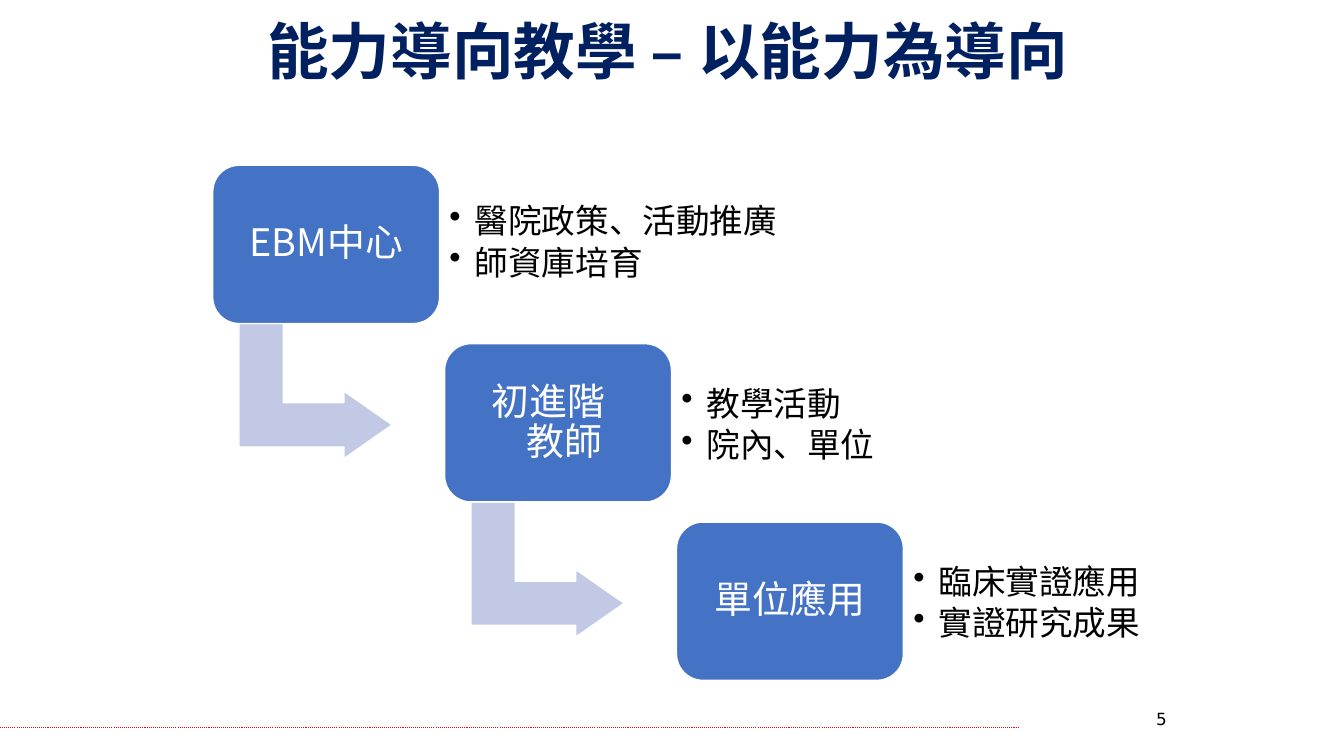
from lxml import etree
from pptx import Presentation
from pptx.dml.color import RGBColor
from pptx.enum.dml import MSO_LINE
from pptx.enum.shapes import MSO_CONNECTOR, MSO_SHAPE
from pptx.enum.text import MSO_ANCHOR, PP_ALIGN
from pptx.oxml.ns import qn
from pptx.util import Pt

PX = 9144  # 100 px to the inch
CJK_FONT = "Noto Sans CJK SC"
NUMBER_FONT = "DejaVu Sans"
NAVY = RGBColor(0x00, 0x20, 0x60)
BLUE = RGBColor(0x44, 0x72, 0xC4)
PALE_BLUE = RGBColor(0xC1, 0xC9, 0xE4)
RED = RGBColor(0xFF, 0x00, 0x00)
WHITE = RGBColor(0xFF, 0xFF, 0xFF)
BLACK = RGBColor(0x00, 0x00, 0x00)

CARD_WIDTH, CARD_HEIGHT = 225, 157
STEP_X, STEP_Y = 230, 177
# label, label hanging indent (None = centred), details, details top and width
STEPS = [
    ("EBM中心", None, ["醫院政策、活動推廣", "師資庫培育"], 11, 346),
    ("初進階\v教師", (55, 35), ["教學活動", "院內、單位"], 15, 256),
    ("單位應用", None, ["臨床實證應用", "實證研究成果"], 15, 248),
]


def px(*lengths):
    return [round(length * PX) for length in lengths]


def write(shape, lines, *, size, color, font=CJK_FONT, bold=False, inset=(10, 5),
          align=PP_ALIGN.LEFT, anchor=MSO_ANCHOR.MIDDLE, pitch=None,
          hanging=None, bullet=None):
    """Fill a shape with one paragraph per line; pitch is the line height in points."""
    frame = shape.text_frame
    frame.word_wrap = True
    frame.vertical_anchor = anchor
    frame.margin_left = frame.margin_right = inset[0] * PX
    frame.margin_top = frame.margin_bottom = inset[1] * PX
    for index, line in enumerate(lines):
        paragraph = frame.add_paragraph() if index else frame.paragraphs[0]
        paragraph.text = line
        paragraph.alignment = align
        if pitch:
            paragraph.line_spacing = Pt(pitch)
        properties = paragraph._p.get_or_add_pPr()
        if hanging:
            margin, indent = px(*hanging)
            properties.set("marL", str(margin))
            properties.set("indent", str(-indent))
        if bullet:
            etree.SubElement(properties, qn("a:buChar"), char=bullet)
        for run in paragraph.runs:
            run.font.size = Pt(size)
            run.font.bold = bold
            run.font.color.rgb = color
            run.font.name = font
            etree.SubElement(run._r.get_or_add_rPr(), qn("a:ea"), typeface=font)


def add_filled(slide, preset, box, fill, adjustments):
    shape = slide.shapes.add_shape(preset, *px(*box))
    shape.shadow.inherit = False
    shape.fill.solid()
    shape.fill.fore_color.rgb = fill
    shape.line.color.rgb = WHITE
    shape.line.width = Pt(1)
    for index, value in enumerate(adjustments):
        shape.adjustments[index] = value
    return shape


def add_title(slide, left, top, width, height):
    title = slide.shapes.title
    title.left, title.top, title.width, title.height = px(left, top, width, height)
    write(title, ["能力導向教學 – 以能力為導向"], size=44, color=NAVY, bold=True,
          align=PP_ALIGN.CENTER, anchor=MSO_ANCHOR.BOTTOM)


def add_step(slide, left, top, step, has_next):
    """Place a card, its details and the bent arrow to the next card."""
    label, hanging, details, details_top, details_width = step
    if has_next:
        arrow = add_filled(slide, MSO_SHAPE.BENT_UP_ARROW,
                           (left + 35, top + 148, 134, 152), PALE_BLUE, (0.328, 0.25, 0.358))
        arrow.rotation = 90
    card = add_filled(slide, MSO_SHAPE.ROUNDED_RECTANGLE,
                      (left, top, CARD_WIDTH, CARD_HEIGHT), BLUE, (0.167,))
    write(card, [label], size=27, color=WHITE, inset=(19, 11), pitch=28.6, hanging=hanging,
          align=PP_ALIGN.LEFT if hanging else PP_ALIGN.CENTER)
    notes = slide.shapes.add_textbox(
        *px(left + CARD_WIDTH, top + details_top, details_width, 127))
    write(notes, details, size=24, color=BLACK, inset=(10, 10), pitch=29.6,
          hanging=(25, 25), bullet="•")


def add_staircase(slide, left, top):
    for index, step in enumerate(STEPS):
        add_step(slide, left + index * STEP_X, top + index * STEP_Y, step,
                 has_next=index < len(STEPS) - 1)


def add_footer(slide, left, top, width):
    rule = slide.shapes.add_connector(
        MSO_CONNECTOR.STRAIGHT, *px(left, top, left + width, top))
    rule.line.color.rgb = RED
    rule.line.width = Pt(0.75)
    rule.line.dash_style = MSO_LINE.ROUND_DOT
    etree.SubElement(rule._element.spPr, qn("a:effectLst"))
    number = slide.shapes.add_textbox(*px(left + 950, top - 24, 217, 52))
    write(number, ["5"], size=12, color=BLACK, font=NUMBER_FONT,
          align=PP_ALIGN.RIGHT, anchor=MSO_ANCHOR.TOP)


def main():
    deck = Presentation()
    deck.slide_width, deck.slide_height = px(1333, 750)
    slide = deck.slides.add_slide(deck.slide_layouts[5])
    add_footer(slide, 0, 722, 1011)
    add_staircase(slide, 211, 164)
    add_title(slide, 79, 0, 1167, 91)
    deck.save("out.pptx")


if __name__ == "__main__":
    main()
